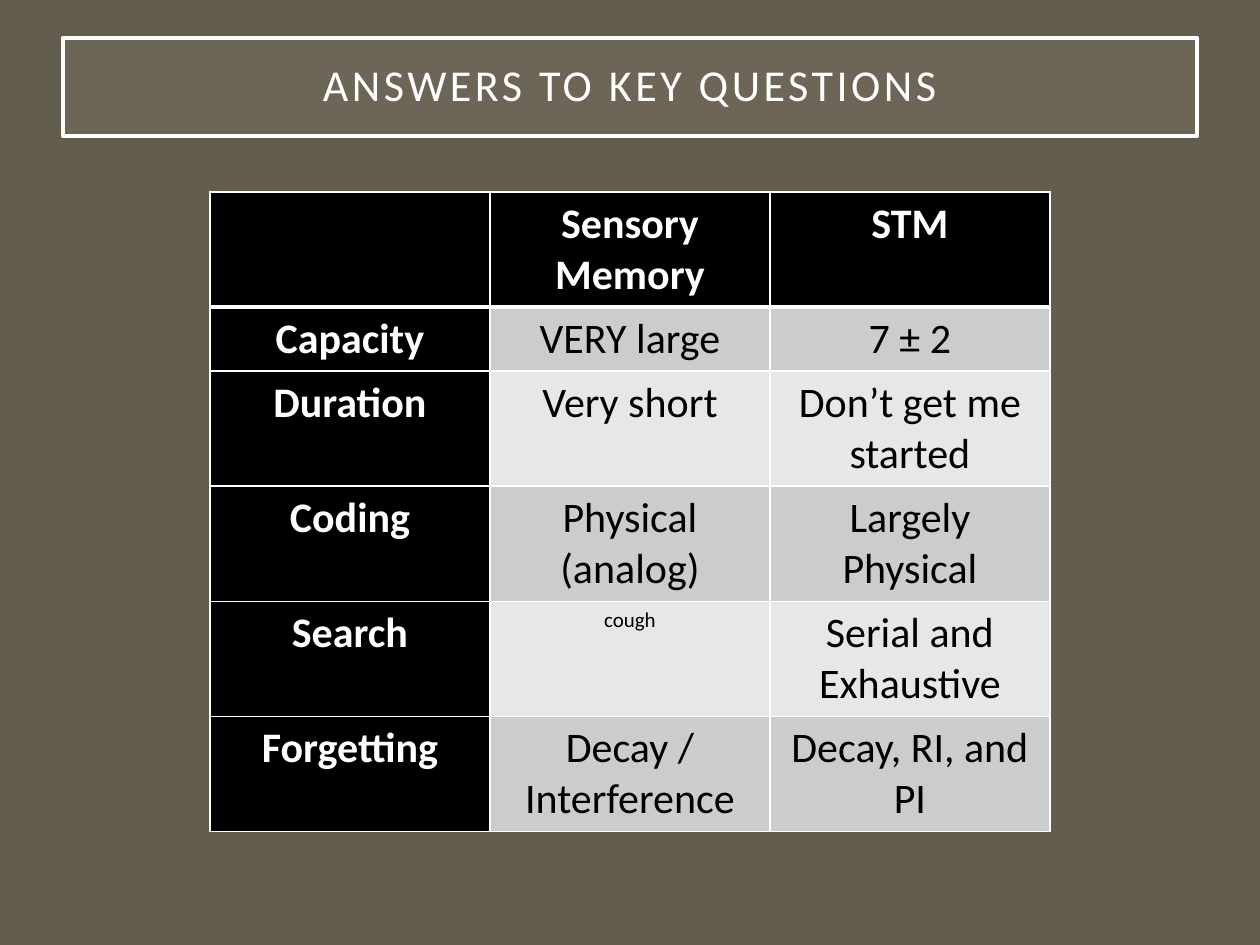
from lxml.etree import SubElement
from pptx import Presentation
from pptx.dml.color import RGBColor
from pptx.enum.text import MSO_ANCHOR as Anchor, MSO_AUTO_SIZE as AutoSize, PP_ALIGN as Align
from pptx.oxml.ns import qn
from pptx.util import Pt

PX = 914400 / 126
FONT = "Calibri"
COLORS = {
    "background": "635D4D",
    "title_fill": "A7A08E",
    "white": "FFFFFF",
    "black": "000000",
    "band_dark": "CCCCCC",
    "band_light": "E7E7E7",
}
TITLE_BOX = (63, 38, 1134, 98)
TABLE_BOX = (210, 192, 840, 639)
ROW_HEIGHTS = [115, 64, 115, 115, 115, 115]
ROWS = [
    ["", "Sensory Memory", "STM"],
    ["Capacity", "VERY large", "7 ± 2"],
    ["Duration", "Very short", "Don’t get me started"],
    ["Coding", "Physical (analog)", "Largely Physical"],
    ["Search", "cough", "Serial and Exhaustive"],
    ["Forgetting", "Decay / Interference", "Decay, RI, and PI"],
]
SMALL_TEXT = {"cough": 12}


def px(value):
    return round(value * PX)


def color(name):
    return RGBColor.from_string(COLORS[name])


def write_text(text_frame, text, size=24, ink="white", bold=False, line_spacing=None, tracking=None):
    paragraph = text_frame.paragraphs[0]
    paragraph.alignment = Align.CENTER
    if line_spacing:
        paragraph.line_spacing = line_spacing
    if not text:
        return
    run = paragraph.add_run()
    run.text = text
    run.font.name = FONT
    run.font.size = Pt(size)
    run.font.bold = bold
    run.font.color.rgb = color(ink)
    if tracking:
        run._r.get_or_add_rPr().set("spc", str(tracking * 100))


def set_border(cell, side, width):
    line = SubElement(cell._tc.get_or_add_tcPr(), qn(f"a:ln{side}"), w=str(Pt(width)))
    fill = SubElement(line, qn("a:solidFill"))
    SubElement(fill, qn("a:srgbClr"), val=COLORS["white"])


def place_title(slide, box):
    title = slide.shapes.title
    title.left, title.top, title.width, title.height = map(px, box)
    title.fill.solid()
    title.fill.fore_color.rgb = color("title_fill")
    fill_color = title._element.spPr.find(qn("a:solidFill"))[0]
    SubElement(fill_color, qn("a:alpha"), val="15000")
    title.line.color.rgb = color("white")
    title.line.width = Pt(2.5)
    frame = title.text_frame
    frame.word_wrap = True
    frame.auto_size = AutoSize.NONE
    frame.vertical_anchor = Anchor.MIDDLE
    frame.margin_left = frame.margin_right = frame.margin_top = frame.margin_bottom = px(25)
    write_text(frame, "ANSWERS TO KEY QUESTIONS", size=25.2, line_spacing=0.9, tracking=2)


def place_answers(slide, box):
    table = slide.shapes.add_table(len(ROWS), len(ROWS[0]), *map(px, box)).table
    table.first_col = True
    for column in table.columns:
        column.width = px(box[2] / len(ROWS[0]))
    for row_index, texts in enumerate(ROWS):
        table.rows[row_index].height = px(ROW_HEIGHTS[row_index])
        band = "band_dark" if row_index % 2 else "band_light"
        for column_index, text in enumerate(texts):
            heading = row_index == 0 or column_index == 0
            cell = table.cell(row_index, column_index)
            for side in "LRTB":
                under_header = (row_index, side) in ((0, "B"), (1, "T"))
                set_border(cell, side, 3 if under_header else 1)
            cell.fill.solid()
            cell.fill.fore_color.rgb = color("black" if heading else band)
            write_text(cell.text_frame, text, size=SMALL_TEXT.get(text, 24),
                       ink="white" if heading else "black", bold=heading)


def main():
    presentation = Presentation()
    presentation.slide_width, presentation.slide_height = px(1260), px(945)
    slide = presentation.slides.add_slide(presentation.slide_layouts[5])
    slide.background.fill.solid()
    slide.background.fill.fore_color.rgb = color("background")
    place_title(slide, TITLE_BOX)
    place_answers(slide, TABLE_BOX)
    presentation.save("out.pptx")


if __name__ == "__main__":
    main()
